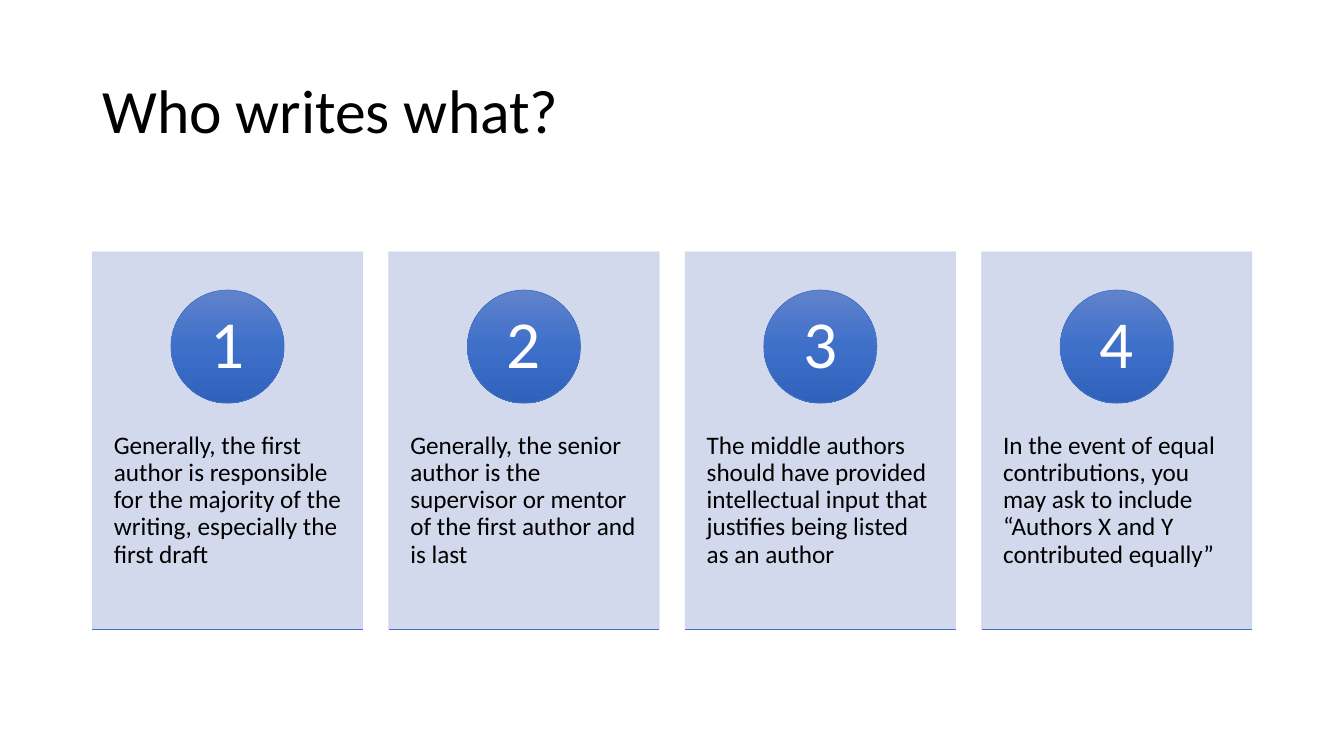
from dataclasses import dataclass

from lxml.etree import SubElement
from pptx import Presentation
from pptx.dml.color import RGBColor
from pptx.enum.shapes import MSO_CONNECTOR as Connector, MSO_SHAPE as Preset
from pptx.enum.text import MSO_ANCHOR as Anchor, PP_ALIGN as Align
from pptx.oxml.ns import qn
from pptx.shapes.autoshape import Shape
from pptx.slide import Slide
from pptx.util import Cm, Pt

FONT = "Calibri"
BLACK, WHITE = "000000", "FFFFFF"
PANEL, ACCENT = "CFD5EA", "4472C4"
BADGE_STOPS = ((0, "6183CB"), (50, "3E70CA"), (100, "3062BB"))

# Layout in centimetres
LEFT, CARD_TOP = 2.33, 6.35
CARD_WIDTH, CARD_HEIGHT, CARD_PITCH = 6.81, 9.51, 7.47
BADGE_TOP, BADGE_SIZE, NUMBER_SIZE = 7.31, 2.85, 2.01
BODY_TOP, BODY_HEIGHT = 9.98, 5.72


@dataclass(frozen=True)
class Area:
    left: float
    top: float
    width: float
    height: float

    def lengths(self) -> tuple:
        return Cm(self.left), Cm(self.top), Cm(self.width), Cm(self.height)


@dataclass(frozen=True)
class TextStyle:
    size: float
    color: str = BLACK
    align: Align = Align.LEFT
    anchor: Anchor = Anchor.TOP
    inset_x: float = 0.25
    inset_y: float = 0.13


TITLE = TextStyle(44, anchor=Anchor.MIDDLE)
BODY = TextStyle(18, inset_x=0.54, inset_y=0.92)
NUMBER = TextStyle(48, WHITE, Align.CENTER, Anchor.MIDDLE, 0.23, 0.03)

CARD_TEXTS = (
    "Generally, the first author is responsible for the majority of the "
    "writing, especially the first draft",
    "Generally, the senior author is the supervisor or mentor of the first "
    "author and is last",
    "The middle authors should have provided intellectual input that "
    "justifies being listed as an author",
    "In the event of equal contributions, you may ask to include "
    "“Authors X and Y contributed equally”",
)


def rgb(color: str) -> RGBColor:
    return RGBColor.from_string(color)


def add_text(page: Slide, area: Area, text: str, style: TextStyle) -> None:
    box = page.shapes.add_textbox(*area.lengths())
    frame = box.text_frame
    frame.text = text
    frame.word_wrap = True
    frame.vertical_anchor = style.anchor
    frame.margin_left = frame.margin_right = Cm(style.inset_x)
    frame.margin_top = frame.margin_bottom = Cm(style.inset_y)
    para = frame.paragraphs[0]
    para.alignment = style.align
    para.line_spacing = 0.9
    span = para.runs[0]
    span.font.name = FONT
    span.font.size = Pt(style.size)
    span.font.color.rgb = rgb(style.color)


def add_outlined(page: Slide, preset: Preset, area: Area, line: str) -> Shape:
    shape = page.shapes.add_shape(preset, *area.lengths())
    shape.shadow.inherit = False
    shape.line.color.rgb = rgb(line)
    shape.line.width = Pt(0.5)
    return shape


def add_panel(page: Slide, area: Area) -> None:
    panel = add_outlined(page, Preset.RECTANGLE, area, PANEL)
    panel.fill.solid()
    panel.fill.fore_color.rgb = rgb(PANEL)
    # Fill and outline are 90 % opaque
    for color in panel._element.spPr.iter(qn("a:srgbClr")):
        SubElement(color, qn("a:alpha"), val="90000")


def add_badge(page: Slide, area: Area) -> None:
    badge = add_outlined(page, Preset.OVAL, area, ACCENT)
    badge.fill.gradient()
    badge.fill.gradient_angle = 270
    stops = next(badge._element.spPr.iter(qn("a:gsLst")))
    for old_stop in list(stops):
        stops.remove(old_stop)
    for percent, color in BADGE_STOPS:
        stop = SubElement(stops, qn("a:gs"), pos=str(percent * 1000))
        SubElement(stop, qn("a:srgbClr"), val=color)


def add_base_line(page: Slide, left: float, top: float, width: float) -> None:
    line = page.shapes.add_connector(
        Connector.STRAIGHT, Cm(left), Cm(top), Cm(left + width), Cm(top))
    line.line.color.rgb = rgb(ACCENT)
    line.line.width = Pt(0.5)
    SubElement(line._element.spPr, qn("a:effectLst"))


def centred_square(card_left: float, middle: float, size: float) -> Area:
    return Area(card_left + (CARD_WIDTH - size) / 2, middle - size / 2, size, size)


def add_card(page: Slide, index: int, text: str) -> None:
    left = LEFT + index * CARD_PITCH
    badge_middle = BADGE_TOP + BADGE_SIZE / 2
    add_panel(page, Area(left, CARD_TOP, CARD_WIDTH, CARD_HEIGHT))
    add_text(page, Area(left, BODY_TOP, CARD_WIDTH, BODY_HEIGHT), text, BODY)
    add_badge(page, centred_square(left, badge_middle, BADGE_SIZE))
    add_text(page, centred_square(left, badge_middle, NUMBER_SIZE),
             str(index + 1), NUMBER)
    add_base_line(page, left, CARD_TOP + CARD_HEIGHT, CARD_WIDTH)


def main() -> None:
    deck = Presentation()
    deck.slide_width, deck.slide_height = Cm(33.87), Cm(19.05)
    page = deck.slides.add_slide(deck.slide_layouts[6])

    # Title
    add_text(page, Area(LEFT, 1.01, 29.21, 3.68), "Who writes what?", TITLE)

    # Numbered cards
    for index, text in enumerate(CARD_TEXTS):
        add_card(page, index, text)

    deck.save("out.pptx")


if __name__ == "__main__":
    main()
